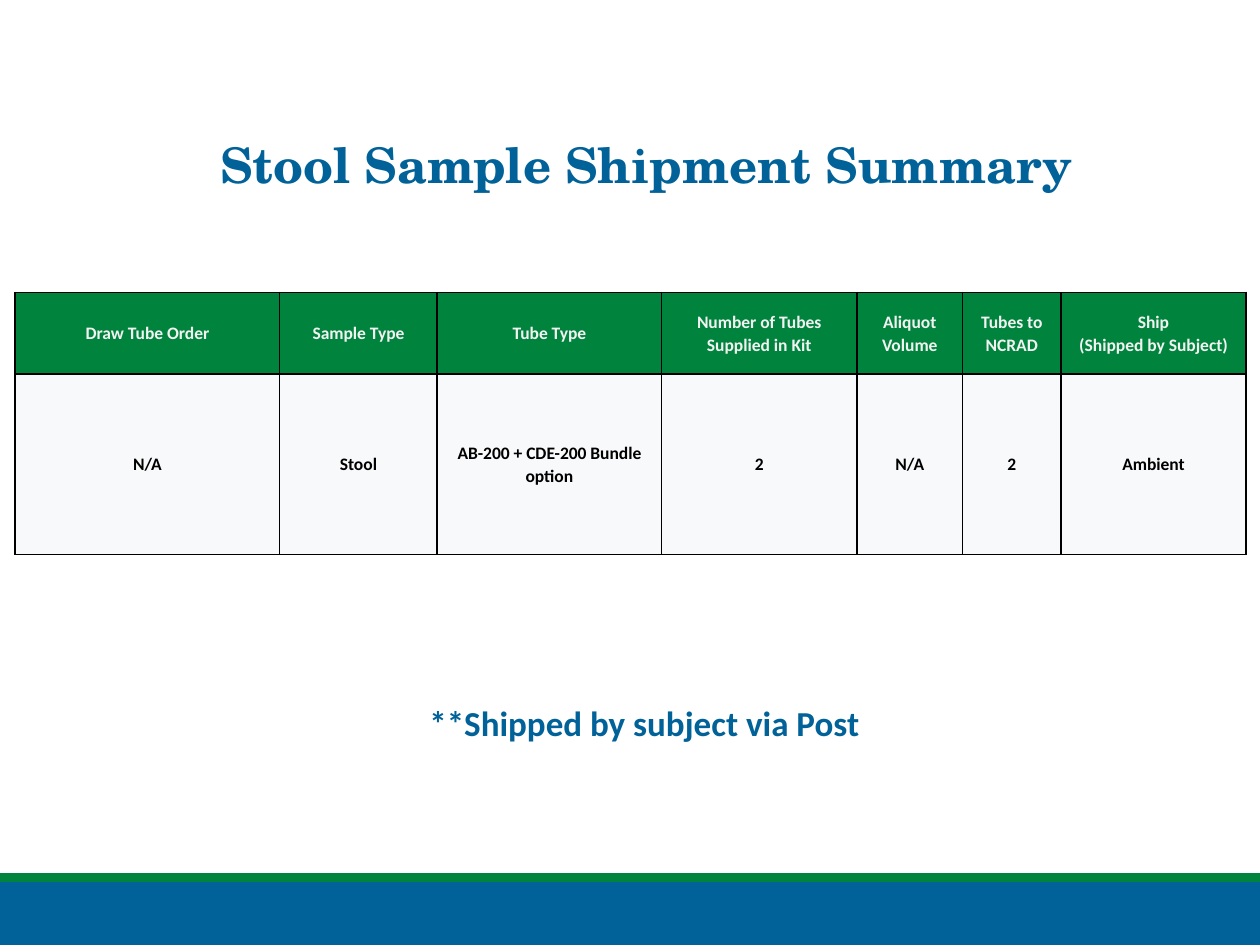
from lxml.etree import SubElement
from pptx import Presentation
from pptx.dml.color import RGBColor
from pptx.enum.shapes import MSO_SHAPE
from pptx.enum.text import MSO_ANCHOR, PP_ALIGN
from pptx.oxml.ns import qn
from pptx.util import Inches, Pt

COLORS = {
    "blue": "006298",
    "green": "00843D",
    "pale": "F8F9FA",
    "header_text": "F2F2F2",
    "black": "000000",
}
TITLE = "Stool Sample Shipment Summary"
NOTE = "**Shipped by subject via Post"
COLUMNS = [
    ("Draw Tube Order", "N/A", 2.1),
    ("Sample Type", "Stool", 1.25),
    ("Tube Type", "AB-200 + CDE-200 Bundle option", 1.78),
    ("Number of Tubes Supplied in Kit", "2", 1.55),
    ("Aliquot Volume", "N/A", 0.84),
    ("Tubes to NCRAD", "2", 0.78),
    ("Ship\n(Shipped by Subject)", "Ambient", 1.47),
]
ROWS = [(0.65, "green", "header_text"), (1.43, "pale", "black")]
FOOTER_BANDS = [(7, 0.5, "blue"), (6.93, 0.07, "green")]


def color(name):
    return RGBColor.from_string(COLORS[name])


def write(frame, text, *, size, fill, font="Calibri", spacing=None):
    frame.word_wrap = True
    for index, line in enumerate(text.split("\n")):
        paragraph = frame.add_paragraph() if index else frame.paragraphs[0]
        paragraph.alignment = PP_ALIGN.CENTER
        paragraph.line_spacing = spacing
        run = paragraph.add_run()
        run.text = line
        run.font.name = font
        run.font.size = Pt(size)
        run.font.bold = True
        run.font.color.rgb = color(fill)


def add_borders(cell):
    properties = cell._tc.get_or_add_tcPr()
    for position, side in enumerate(("lnL", "lnR", "lnT", "lnB")):
        line = properties.makeelement(qn(f"a:{side}"), {"w": str(Pt(1))})
        properties.insert(position, line)
        solid = SubElement(line, qn("a:solidFill"))
        SubElement(solid, qn("a:srgbClr"), val=COLORS["black"])


def add_table(slide):
    width = sum(column[2] for column in COLUMNS)
    height = sum(row[0] for row in ROWS)
    table = slide.shapes.add_table(
        len(ROWS), len(COLUMNS),
        Inches(0.12), Inches(2.32), Inches(width), Inches(height),
    ).table
    for column, (*texts, column_width) in enumerate(COLUMNS):
        table.columns[column].width = Inches(column_width)
        for row, (row_height, fill, text_color) in enumerate(ROWS):
            table.rows[row].height = Inches(row_height)
            cell = table.cell(row, column)
            cell.fill.solid()
            cell.fill.fore_color.rgb = color(fill)
            cell.vertical_anchor = MSO_ANCHOR.MIDDLE
            cell.margin_left = cell.margin_right = Inches(0.07)
            cell.margin_top = cell.margin_bottom = 0
            write(cell.text_frame, texts[row], size=10, fill=text_color, spacing=1.06)
            add_borders(cell)


def main():
    presentation = Presentation()
    presentation.slide_width = Inches(10)
    presentation.slide_height = Inches(7.5)
    slide = presentation.slides.add_slide(presentation.slide_layouts[6])

    for top, height, fill in FOOTER_BANDS:
        band = slide.shapes.add_shape(
            MSO_SHAPE.RECTANGLE, 0, Inches(top), Inches(10), Inches(height)
        )
        band.shadow.inherit = False
        band.fill.solid()
        band.fill.fore_color.rgb = color(fill)
        band.line.fill.background()

    title = slide.shapes.add_textbox(
        Inches(0.82), Inches(0.97), Inches(8.62), Inches(0.72)
    )
    title.text_frame.vertical_anchor = MSO_ANCHOR.MIDDLE
    write(title.text_frame, TITLE, size=28, fill="blue",
          font="TeX Gyre Schola", spacing=0.9)

    add_table(slide)

    note = slide.shapes.add_textbox(
        Inches(2.71), Inches(5.52), Inches(4.81), Inches(0.44)
    )
    write(note.text_frame, NOTE, size=20, fill="blue")

    presentation.save("out.pptx")


if __name__ == "__main__":
    main()
